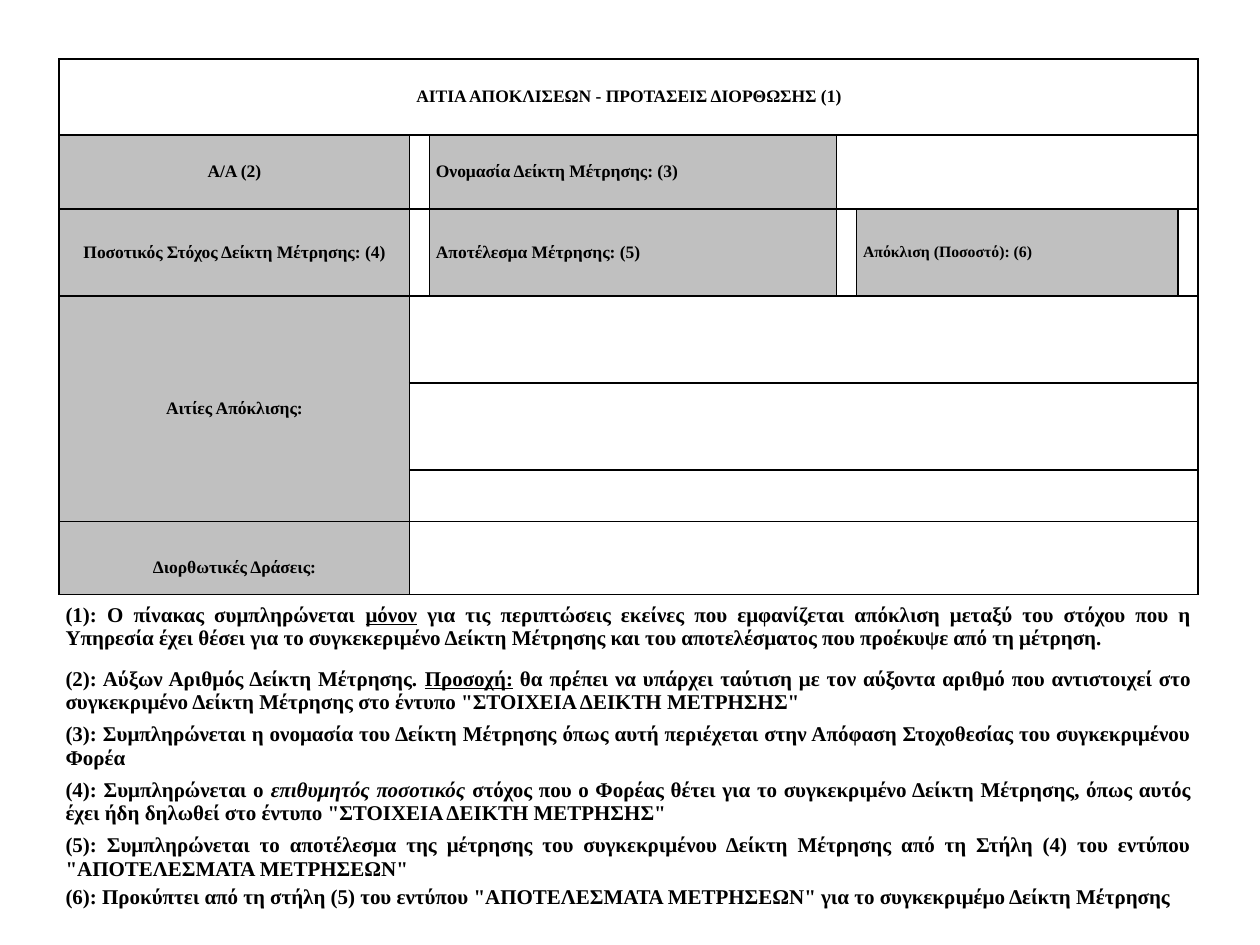
from lxml.etree import SubElement
from pptx import Presentation
from pptx.dml.color import RGBColor
from pptx.enum.text import MSO_ANCHOR as Anchor, PP_ALIGN as Align
from pptx.oxml.ns import qn
from pptx.util import Inches, Pt

GREY = "C0C0C0"
BLACK = "000000"
COLUMNS = [2.78, 0.16, 3.23, 0.16, 2.55, 0.16]
FORM_ROWS = [0.6, 0.59, 0.69, 0.69, 0.69, 0.41, 0.58]
NOTE_ROWS = [0.51, 0.51, 0.26, 0.51, 0.26, 0.26]
LAST_COLUMN = len(COLUMNS) - 1

# Merged areas of the form: first row, first column, last row, last column
SPANS = [(0, 0, 0, LAST_COLUMN), (1, 3, 1, LAST_COLUMN), (3, 0, 5, 0)]
SPANS += [(row, 1, row, LAST_COLUMN) for row in range(3, 7)]

# Labels: row, column, text, alignment, size, fill
LABELS = [
    (0, 0, "ΑΙΤΙΑ ΑΠΟΚΛΙΣΕΩΝ - ΠΡΟΤΑΣΕΙΣ ΔΙΟΡΘΩΣΗΣ (1)", Align.CENTER, 10, None),
    (1, 0, "Α/Α (2)", Align.CENTER, 10, GREY),
    (1, 2, "Ονομασία Δείκτη Μέτρησης: (3)", Align.LEFT, 10, GREY),
    (2, 0, "Ποσοτικός Στόχος Δείκτη Μέτρησης: (4)", Align.CENTER, 10, GREY),
    (2, 2, "Αποτέλεσμα Μέτρησης: (5)", Align.LEFT, 10, GREY),
    (2, 4, "Απόκλιση (Ποσοστό): (6)", Align.LEFT, 9, GREY),
    (3, 0, "Αιτίες Απόκλισης:", Align.CENTER, 10, GREY),
    (6, 0, "Διορθωτικές Δράσεις:", Align.CENTER, 10, GREY),
]

# Notes: runs of text, each with its own format
PLAIN = {}
UNDERLINED = {"underline": True}
ITALIC = {"italic": True}
NOTES = [
    [("(1): Ο πίνακας συμπληρώνεται ", PLAIN), ("μόνον", UNDERLINED),
     (" για τις περιπτώσεις εκείνες που εμφανίζεται απόκλιση μεταξύ του στόχου "
      "που η Υπηρεσία έχει θέσει για το συγκεκεριμένο Δείκτη Μέτρησης και του "
      "αποτελέσματος που προέκυψε από τη μέτρηση.", PLAIN)],
    [("(2): Αύξων Αριθμός Δείκτη Μέτρησης. ", PLAIN), ("Προσοχή:", UNDERLINED),
     (" θα πρέπει να υπάρχει ταύτιση με τον αύξοντα αριθμό που αντιστοιχεί στο "
      'συγκεκριμένο Δείκτη Μέτρησης στο έντυπο "ΣΤΟΙΧΕΙΑ ΔΕΙΚΤΗ ΜΕΤΡΗΣΗΣ"', PLAIN)],
    [("(3): Συμπληρώνεται η ονομασία του Δείκτη Μέτρησης όπως αυτή περιέχεται "
      "στην Απόφαση Στοχοθεσίας του συγκεκριμένου Φορέα", PLAIN)],
    [("(4): Συμπληρώνεται ο ", PLAIN), ("επιθυμητός ποσοτικός", ITALIC),
     (" στόχος που ο Φορέας θέτει για το συγκεκριμένο Δείκτη Μέτρησης, όπως "
      'αυτός έχει ήδη δηλωθεί στο έντυπο "ΣΤΟΙΧΕΙΑ ΔΕΙΚΤΗ ΜΕΤΡΗΣΗΣ"', PLAIN)],
    [("(5): Συμπληρώνεται το αποτέλεσμα της μέτρησης του συγκεκριμένου Δείκτη "
      'Μέτρησης από τη Στήλη (4) του εντύπου "ΑΠΟΤΕΛΕΣΜΑΤΑ ΜΕΤΡΗΣΕΩΝ"', PLAIN)],
    [('(6): Προκύπτει από τη στήλη (5) του εντύπου "ΑΠΟΤΕΛΕΣΜΑΤΑ ΜΕΤΡΗΣΕΩΝ" '
      "για το συγκεκριμέμο Δείκτη Μέτρησης", PLAIN)],
]


def color(value):
    return RGBColor.from_string(value)


class SlideBuilder:
    font_name = "Times New Roman"
    border_width = Pt(1)

    def __init__(self, slide):
        self.slide = slide

    def table(self, left, top, columns, rows):
        shape = self.slide.shapes.add_table(
            len(rows), len(columns), Inches(left), Inches(top),
            Inches(sum(columns)), Inches(sum(rows)))
        table = shape.table
        table.first_row = table.horz_banding = False
        for column, width in zip(table.columns, columns):
            column.width = Inches(width)
        for row, height in zip(table.rows, rows):
            row.height = Inches(height)
        return table

    def cell(self, cell, bordered_sides):
        layout = {"margin_left": Inches(0.05), "margin_right": Inches(0.05),
                  "margin_top": 0, "margin_bottom": 0,
                  "vertical_anchor": Anchor.MIDDLE}
        for name, value in layout.items():
            setattr(cell, name, value)
        properties = cell._tc.get_or_add_tcPr()
        for side in "LRTB":
            line = SubElement(properties, qn(f"a:ln{side}"), w=str(self.border_width))
            if side in bordered_sides:
                fill = SubElement(line, qn("a:solidFill"))
                SubElement(fill, qn("a:srgbClr"), val=BLACK)
            else:
                SubElement(line, qn("a:noFill"))
        cell.fill.background()

    def text(self, cell, runs, alignment, size):
        paragraph = cell.text_frame.paragraphs[0]
        paragraph.alignment = alignment
        for text, extra in runs:
            run = paragraph.add_run()
            run.text = text
            style = {"name": self.font_name, "size": Pt(size), "bold": True, **extra}
            for name, value in style.items():
                setattr(run.font, name, value)
            run.font.color.rgb = color(BLACK)

    def fill(self, cell, value):
        cell.fill.solid()
        cell.fill.fore_color.rgb = color(value)


def main():
    presentation = Presentation()
    presentation.slide_width = Inches(10)
    presentation.slide_height = Inches(7.5)
    builder = SlideBuilder(presentation.slides.add_slide(presentation.slide_layouts[6]))

    # Grid: the form is ruled, the notes below it are not
    table = builder.table(0.47, 0.47, COLUMNS, FORM_ROWS + NOTE_ROWS)
    first_note = len(FORM_ROWS)
    for row in range(len(table.rows)):
        sides = "LRTB" if row < first_note else "T" if row == first_note else ""
        for column in range(len(COLUMNS)):
            builder.cell(table.cell(row, column), sides)

    # Merged areas
    note_spans = [(first_note + index, 0, first_note + index, LAST_COLUMN)
                  for index in range(len(NOTES))]
    for top, left, bottom, right in SPANS + note_spans:
        table.cell(top, left).merge(table.cell(bottom, right))

    # Form labels
    for row, column, text, alignment, size, fill in LABELS:
        cell = table.cell(row, column)
        builder.text(cell, [(text, PLAIN)], alignment, size)
        if fill:
            builder.fill(cell, fill)
    # The last label sits a little below the middle
    table.cell(6, 0).margin_top = Inches(0.16)

    # Notes
    for row, runs in enumerate(NOTES, first_note):
        builder.text(table.cell(row, 0), runs, Align.JUSTIFY, 12)

    presentation.save("out.pptx")


if __name__ == "__main__":
    main()
